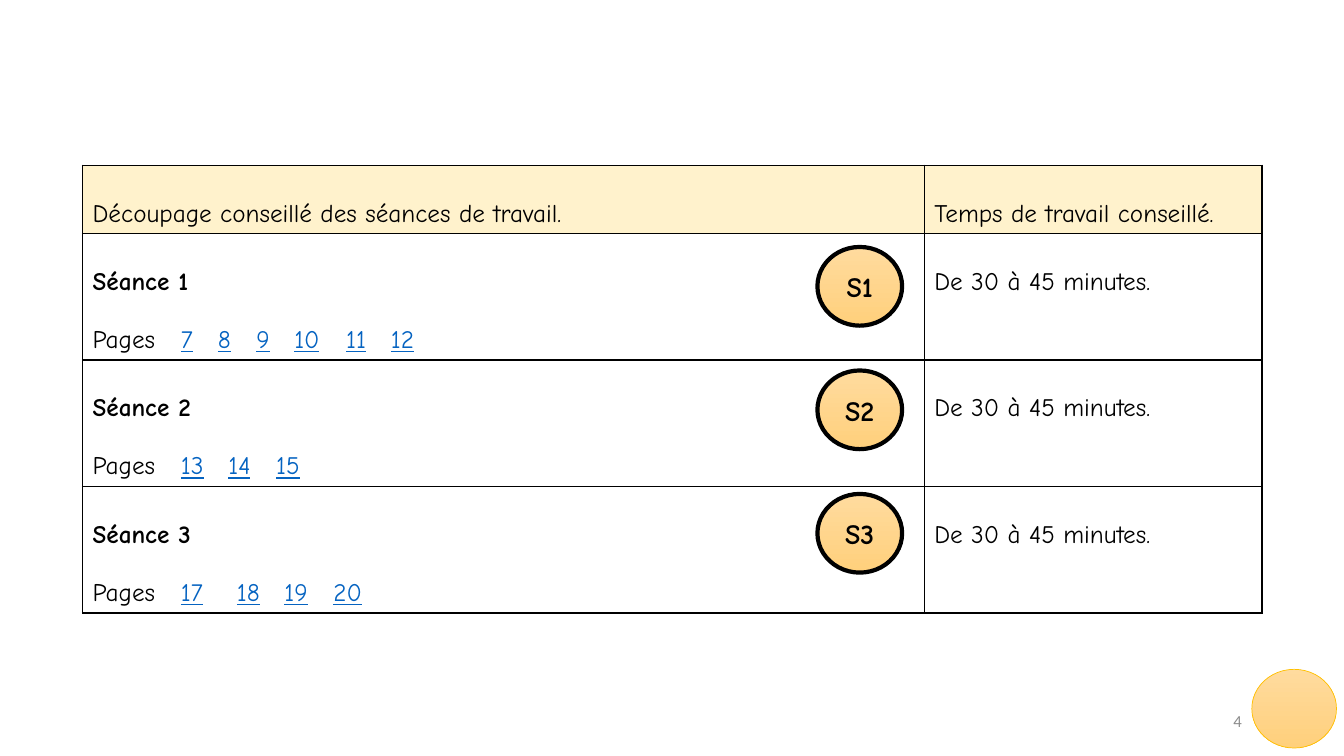
from lxml import etree
from pptx import Presentation
from pptx.dml.color import RGBColor
from pptx.enum.shapes import MSO_SHAPE
from pptx.enum.text import MSO_ANCHOR, PP_ALIGN
from pptx.oxml.ns import qn
from pptx.util import Pt

OVAL = MSO_SHAPE.OVAL
MIDDLE = MSO_ANCHOR.MIDDLE
CENTER, RIGHT = PP_ALIGN.CENTER, PP_ALIGN.RIGHT

HEADERS = ["Découpage conseillé des séances de travail.", "Temps de travail conseillé."]
# Each page number goes with its tab stop, in points from the cell's text edge.
SESSIONS = [
    ("Séance 1", "S1", "De 30 à 45 minutes.",
     {"7": 63, "8": 89.5, "9": 117, "10": 144, "11": 181, "12": 213}),
    ("Séance 2", "S2", "De 30 à 45 minutes.", {"13": 63, "14": 97, "15": 131}),
    ("Séance 3", "S3", "De 30 à 45 minutes.", {"17": 63, "18": 103, "19": 137, "20": 172}),
]
PAGES_LABEL = "Pages"
SLIDE_NUMBER = "4"

SLIDE_W, SLIDE_H = 960, 540
TABLE_X, TABLE_Y = 59, 118
COL_WIDTHS = [601.2, 241.2]
HEADER_H, SESSION_H = 48.4, 90.3
BADGE_W, BADGE_H = 60.5, 56.2
BADGE_X, BADGE_Y, BADGE_STEP = 583.9, 176.4, 88.2
CORNER_X, CORNER_Y = 894.2, 478.1


class Theme:
    font, number_font = "Comic Neue", "Calibri"
    body_size, badge_size, number_size = 18, 20, 12
    black = RGBColor(0x00, 0x00, 0x00)
    link = RGBColor(0x05, 0x63, 0xC1)
    grey = RGBColor(0x8C, 0x8C, 0x8C)
    header_fill = RGBColor(0xFF, 0xF2, 0xCC)
    badge_top = RGBColor(0xFF, 0xDB, 0x9E)
    badge_bottom = RGBColor(0xFF, 0xD0, 0x7C)
    gold = RGBColor(0xFF, 0xC0, 0x00)


def add_run(p, text, size=Theme.body_size, color=Theme.black, bold=False,
            underline=False, font=Theme.font):
    r = p.add_run()
    r.text = text
    r.font.name, r.font.size = font, Pt(size)
    r.font.color.rgb = color
    r.font.bold, r.font.underline = bold, underline


def set_tab_stops(p, stops):
    tabs = etree.SubElement(p._p.get_or_add_pPr(), qn("a:tabLst"))
    for stop in stops:
        etree.SubElement(tabs, qn("a:tab"), pos=str(int(Pt(stop))), algn="l")


def set_borders(cell):
    tc_pr = cell._tc.get_or_add_tcPr()
    for i, side in enumerate(("lnL", "lnR", "lnT", "lnB")):
        ln = etree.Element(qn(f"a:{side}"), w=str(int(Pt(1))))
        fill = etree.SubElement(ln, qn("a:solidFill"))
        etree.SubElement(fill, qn("a:srgbClr"), val=str(Theme.black))
        tc_pr.insert(i, ln)


def first_line(cell, text, bold=False):
    p = cell.text_frame.paragraphs[0]
    p.line_spacing = 2.0
    add_run(p, text, bold=bold)


def add_pages(cell, pages):
    p = cell.text_frame.add_paragraph()
    p.line_spacing = 2.0
    set_tab_stops(p, pages.values())
    add_run(p, PAGES_LABEL)
    for page in pages:
        add_run(p, "\t")
        add_run(p, page, color=Theme.link, underline=True)


def add_sessions_table(s):
    height = HEADER_H + SESSION_H * len(SESSIONS)
    table = s.shapes.add_table(len(SESSIONS) + 1, len(COL_WIDTHS), Pt(TABLE_X), Pt(TABLE_Y),
                               Pt(sum(COL_WIDTHS)), Pt(height)).table
    table.first_row = table.horz_banding = False
    for column, width in zip(table.columns, COL_WIDTHS):
        column.width = Pt(width)
    for i, row in enumerate(table.rows):
        row.height = Pt(SESSION_H if i else HEADER_H)
        for cell in row.cells:
            if i:
                cell.fill.background()
            else:
                cell.fill.solid()
                cell.fill.fore_color.rgb = Theme.header_fill
            set_borders(cell)
    for col, text in enumerate(HEADERS):
        first_line(table.cell(0, col), text)
    for row, (name, _, duration, pages) in enumerate(SESSIONS, 1):
        first_line(table.cell(row, 0), name, bold=True)
        add_pages(table.cell(row, 0), pages)
        first_line(table.cell(row, 1), duration)


def add_badge(s, x, y, line_color, line_width):
    sp = s.shapes.add_shape(OVAL, Pt(x), Pt(y), Pt(BADGE_W), Pt(BADGE_H))
    sp.shadow.inherit = False
    sp.fill.gradient()
    sp.fill.gradient_angle = 270
    for stop, color in zip(sp.fill.gradient_stops, (Theme.badge_top, Theme.badge_bottom)):
        stop.color.rgb = color
    sp.line.color.rgb = line_color
    sp.line.width = Pt(line_width)
    return sp


def add_session_badges(s):
    for i, (_, label, _, _) in enumerate(SESSIONS):
        sp = add_badge(s, BADGE_X, BADGE_Y + i * BADGE_STEP, Theme.black, 3)
        tf = sp.text_frame
        tf.word_wrap = False
        tf.vertical_anchor = MIDDLE
        p = tf.paragraphs[0]
        p.alignment = CENTER
        add_run(p, label, Theme.badge_size, bold=True)


def add_slide_number(s):
    tf = s.shapes.add_textbox(Pt(678.2), Pt(500.4), Pt(216), Pt(28.8)).text_frame
    tf.word_wrap = True
    tf.vertical_anchor = MIDDLE
    p = tf.paragraphs[0]
    p.alignment = RIGHT
    add_run(p, SLIDE_NUMBER, Theme.number_size, Theme.grey, font=Theme.number_font)


def main():
    prs = Presentation()
    prs.slide_width, prs.slide_height = Pt(SLIDE_W), Pt(SLIDE_H)
    s = prs.slides.add_slide(prs.slide_layouts[6])
    add_sessions_table(s)
    add_session_badges(s)
    add_badge(s, CORNER_X, CORNER_Y, Theme.gold, 0.5)
    add_slide_number(s)
    prs.save("out.pptx")


if __name__ == "__main__":
    main()
